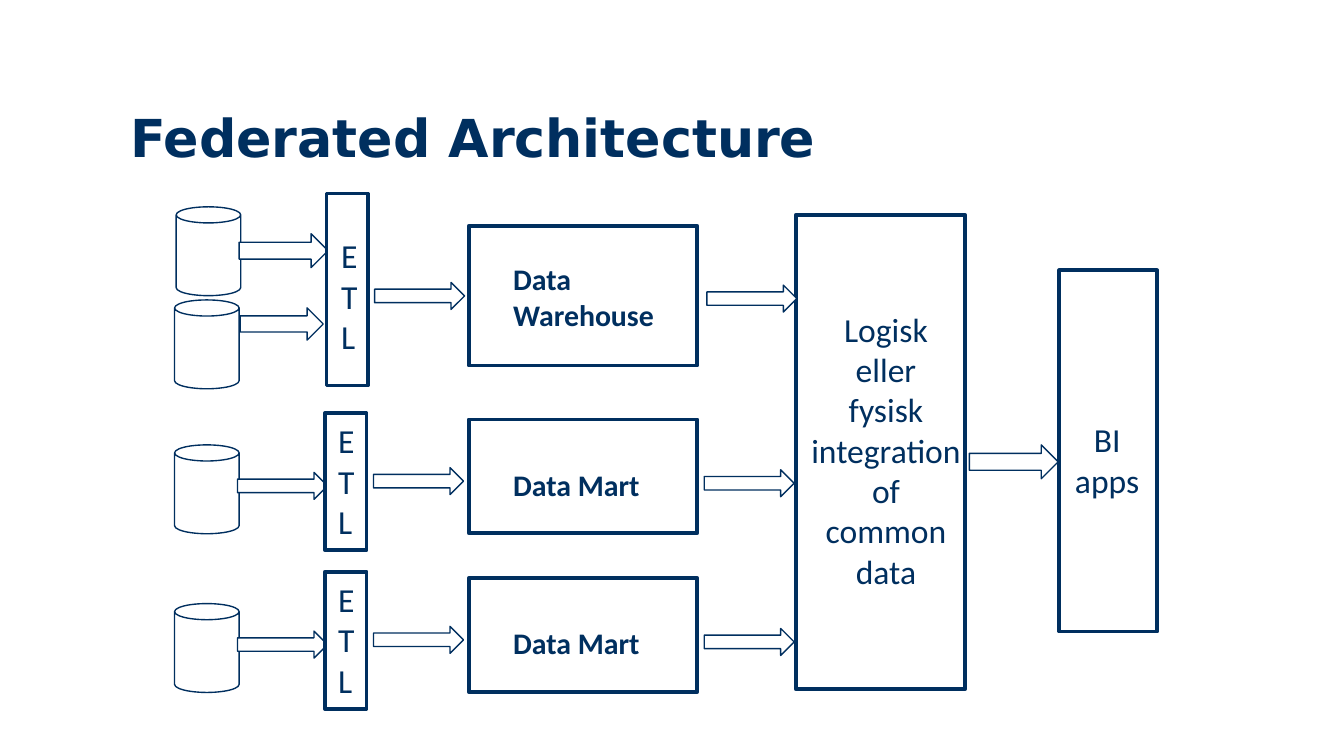
from dataclasses import dataclass

from pptx import Presentation
from pptx.dml.color import RGBColor
from pptx.enum.shapes import MSO_SHAPE
from pptx.enum.text import MSO_ANCHOR, MSO_AUTO_SIZE, PP_ALIGN
from pptx.util import Cm, Pt

CAN, ARROW, RECT = MSO_SHAPE.CAN, MSO_SHAPE.RIGHT_ARROW, MSO_SHAPE.RECTANGLE
LEFT, CENTER = PP_ALIGN.LEFT, PP_ALIGN.CENTER
MIDDLE = MSO_ANCHOR.MIDDLE
GROW = MSO_AUTO_SIZE.SHAPE_TO_FIT_TEXT


@dataclass(frozen=True)
class Theme:
    ink: RGBColor = RGBColor(0x00, 0x2F, 0x5F)
    paper: RGBColor = RGBColor(0xFF, 0xFF, 0xFF)
    title_font: str = "DejaVu Sans"
    body_font: str = "Calibri"
    title_size: float = 28
    label_size: float = 18
    store_size: float = 16
    thin: float = 0.75
    thick: float = 2


THEME = Theme()
CAN_SIZE = (1.22, 1.68)
ARROW_SIZE = (1.7, 0.51)


def inside(box, left, top, width, height):
    """Turn a place relative to the box into a place on the page."""
    return box[0] + left, box[1] + top, width, height


def add_outline(page, kind, place, weight=THEME.thin):
    shape = page.shapes.add_shape(kind, *map(Cm, place))
    shape.shadow.inherit = False
    shape.fill.solid()
    shape.fill.fore_color.rgb = THEME.paper
    shape.line.color.rgb = THEME.ink
    shape.line.width = Pt(weight)


def add_text(page, place, lines, size=THEME.label_size, font=THEME.body_font,
             bold=False, align=LEFT, wrap=True):
    label = page.shapes.add_textbox(*map(Cm, place))
    frame = label.text_frame
    frame.word_wrap = wrap
    frame.auto_size = GROW
    frame.text = "\n".join(lines)
    for para in frame.paragraphs:
        para.alignment = align
        para.font.name = font
        para.font.size = Pt(size)
        para.font.bold = bold
        para.font.color.rgb = THEME.ink
    return frame


def add_title(page, box):
    frame = add_text(page, box, ["Federated Architecture"], THEME.title_size,
                     THEME.title_font, bold=True)
    frame.auto_size = MSO_AUTO_SIZE.NONE
    frame.vertical_anchor = MIDDLE


def add_lane(page, box, sources, etl, etl_text, store, store_text, name, links):
    """Draw sources, ETL step, data store and the arrows between them."""
    for can, arrow in sources:
        add_outline(page, CAN, inside(box, *can, *CAN_SIZE))
        add_outline(page, ARROW, inside(box, *arrow))
    add_outline(page, RECT, inside(box, *etl), THEME.thick)
    add_text(page, inside(box, *etl_text, 0.81, 2.57), "ETL", wrap=False)
    add_outline(page, RECT, inside(box, *store), THEME.thick)
    add_text(page, inside(box, *store_text), [name], THEME.store_size, bold=True)
    for link in links:
        add_outline(page, ARROW, inside(box, *link, *ARROW_SIZE))


def add_warehouse_lane(page, box):
    add_lane(
        page, box,
        sources=[((0.03, 0.25), (1.22, 0.76, 1.68, 0.64)),
                 ((0, 2.01), (1.24, 2.16, 1.57, 0.61))],
        etl=(2.87, 0, 0.78, 3.63), etl_text=(2.9, 0.66),
        store=(5.56, 0.61, 4.32, 2.64), store_text=(6.15, 1.14, 3.35, 1.63),
        name="Data Warehouse", links=[(3.78, 1.68), (10.06, 1.73)])


def add_mart_lane(page, box):
    add_lane(
        page, box,
        sources=[((0, 0.6), (1.19, 1.12, *ARROW_SIZE))],
        etl=(2.84, 0, 0.79, 2.59), etl_text=(2.84, 0.01),
        store=(5.56, 0.12, 4.32, 2.15), store_text=(6.15, 0.88, 3.35, 0.94),
        name="Data Mart", links=[(3.76, 1.03), (10.01, 1.07)])


def add_integration(page, box):
    add_outline(page, RECT, box, THEME.thick)
    add_text(page, inside(box, 0.03, 1.65, 3.35, 5.64),
             ["Logisk eller", "fysisk integration of common data"], align=CENTER)


def add_apps(page, box):
    """Draw the application block and the arrow that leads into it."""
    add_outline(page, ARROW, inside(box, -1.7, 3.3, 1.68, 0.64))
    add_outline(page, RECT, box, THEME.thick)
    add_text(page, inside(box, 0.03, 2.69, 1.75, 1.8), ["BI", "apps"],
             align=CENTER, wrap=False)


def main():
    deck = Presentation()
    deck.slide_width, deck.slide_height = Cm(25.4), Cm(14.29)
    page = deck.slides.add_slide(deck.slide_layouts[6])
    lane_left, lane_width = 3.3, 11.76
    add_title(page, (2.21, 1.75, 19.02, 1.65))
    add_integration(page, (15.04, 4.06, 3.2, 8.97))
    add_warehouse_lane(page, (lane_left, 3.66, lane_width, 3.63))
    for row in range(2):
        add_mart_lane(page, (lane_left, 7.81 + row * 3, lane_width, 2.59))
    add_apps(page, (20.02, 5.11, 1.85, 6.83))
    deck.save("out.pptx")


if __name__ == "__main__":
    main()
